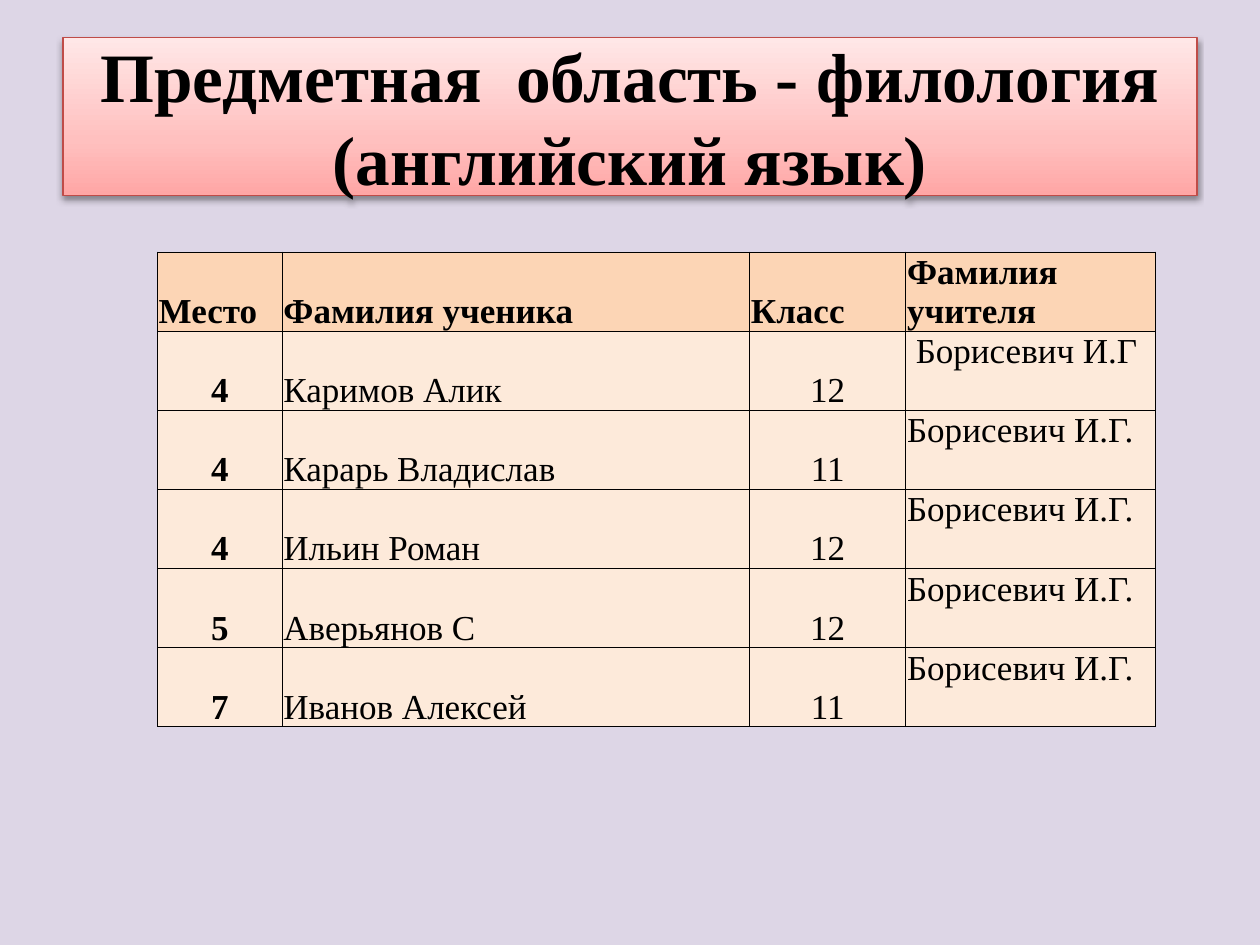
from pptx import Presentation
from pptx.dml.color import RGBColor
from pptx.enum.text import MSO_ANCHOR, MSO_AUTO_SIZE, PP_ALIGN
from pptx.oxml import parse_xml
from pptx.oxml.ns import nsdecls
from pptx.util import Inches, Pt

TOP, MIDDLE, BOTTOM = MSO_ANCHOR.TOP, MSO_ANCHOR.MIDDLE, MSO_ANCHOR.BOTTOM
LEFT, CENTER = PP_ALIGN.LEFT, PP_ALIGN.CENTER
NO_FIT = MSO_AUTO_SIZE.NONE

FONT = "Times New Roman"
COLORS = {
    "background": "DDD6E6",
    "text": "000000",
    "title_line": "BF4C48",
    "title_bottom": "FFA6A5",
    "title_middle": "FFC0BF",
    "title_top": "FFE7E7",
    "header": "FCD5B5",
    "body": "FDEADA",
    "border": "000000",
}
TITLE = "Предметная  область - филология (английский язык)"
HEADER = ["Место", "Фамилия ученика", "Класс", "Фамилия учителя"]
RESULTS = [
    ["4", "Каримов Алик", "12", " Борисевич И.Г"],
    ["4", "Карарь Владислав", "11", "Борисевич И.Г."],
    ["4", "Ильин Роман", "12", "Борисевич И.Г."],
    ["5", "Аверьянов С", "12", "Борисевич И.Г."],
    ["7", "Иванов Алексей", "11", "Борисевич И.Г."],
]
COLUMN_WIDTHS = [0.99, 3.71, 1.24, 1.98]
PLACE, PUPIL, GRADE, TEACHER = range(4)


def color(name):
    return RGBColor.from_string(COLORS[name])


def write(frame, text, size, bold, align):
    para = frame.paragraphs[0]
    para.alignment = align
    span = para.add_run()
    span.text = text
    span.font.name = FONT
    span.font.size = Pt(size)
    span.font.bold = bold
    span.font.color.rgb = color("text")


def add_gradient(box, stops):
    marks = "".join(
        f'<a:gs pos="{percent * 1000}"><a:srgbClr val="{COLORS[name]}"/></a:gs>'
        for percent, name in stops
    )
    box._element.spPr.append(parse_xml(
        f'<a:gradFill {nsdecls("a")} rotWithShape="1"><a:gsLst>{marks}</a:gsLst>'
        '<a:lin ang="16200000" scaled="0"/></a:gradFill>'
    ))


def add_shadow(box):
    box._element.spPr.append(parse_xml(
        f'<a:effectLst {nsdecls("a")}><a:outerShdw blurRad="{Pt(3.1)}" '
        f'dist="{Pt(1.6)}" dir="5400000" rotWithShape="0">'
        '<a:srgbClr val="000000"><a:alpha val="38000"/></a:srgbClr>'
        '</a:outerShdw></a:effectLst>'
    ))


def place_title(page, left, top, width, height):
    box = page.shapes.title
    box.left, box.top = Inches(left), Inches(top)
    box.width, box.height = Inches(width), Inches(height)
    add_gradient(box, [(0, "title_bottom"), (35, "title_middle"), (100, "title_top")])
    box.line.color.rgb = color("title_line")
    box.line.width = Pt(0.75)
    add_shadow(box)
    frame = box.text_frame
    frame.word_wrap = True
    frame.auto_size = NO_FIT
    frame.vertical_anchor = MIDDLE
    write(frame, TITLE, 39.6, True, CENTER)


def add_borders(cell):
    properties = cell._tc.get_or_add_tcPr()
    for position, side in enumerate(("lnL", "lnR", "lnT", "lnB")):
        properties.insert(position, parse_xml(
            f'<a:{side} {nsdecls("a")} w="{Pt(0.5)}"><a:solidFill>'
            f'<a:srgbClr val="{COLORS["border"]}"/></a:solidFill></a:{side}>'
        ))


def fill_cell(cell, text, column, is_header):
    cell.margin_left = cell.margin_right = cell.margin_top = Inches(0.01)
    cell.margin_bottom = 0
    cell.vertical_anchor = TOP if column == TEACHER and not is_header else BOTTOM
    cell.fill.solid()
    cell.fill.fore_color.rgb = color("header" if is_header else "body")
    centered = column in (PLACE, GRADE) and not is_header
    write(cell.text_frame, text, 20, is_header or column == PLACE,
          CENTER if centered else LEFT)
    add_borders(cell)


def place_results(page, left, top, width, height):
    rows = [HEADER] + RESULTS
    table = page.shapes.add_table(
        len(rows), len(HEADER),
        Inches(left), Inches(top), Inches(width), Inches(height),
    ).table
    for column, column_width in zip(table.columns, COLUMN_WIDTHS):
        column.width = Inches(column_width)
    for row, texts in enumerate(rows):
        for column, text in enumerate(texts):
            fill_cell(table.cell(row, column), text, column, row == 0)


def main():
    deck = Presentation()
    deck.slide_width, deck.slide_height = Inches(10), Inches(7.5)
    page = deck.slides.add_slide(deck.slide_layouts[5])
    page.background.fill.solid()
    page.background.fill.fore_color.rgb = color("background")
    place_title(page, 0.5, 0.3, 9, 1.25)
    place_results(page, 1.25, 2, sum(COLUMN_WIDTHS), 3.77)
    deck.save("out.pptx")


if __name__ == "__main__":
    main()
